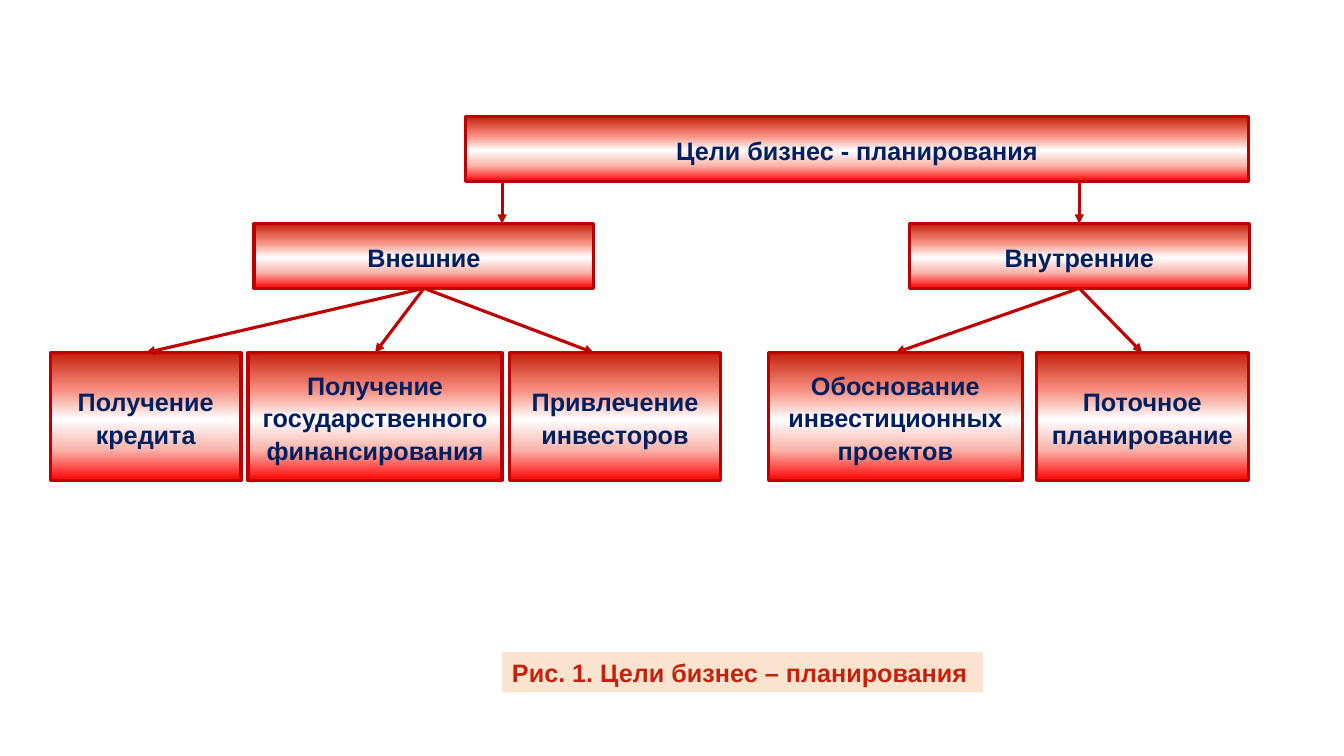
from dataclasses import dataclass

from lxml import etree
from pptx import Presentation
from pptx.dml.color import RGBColor
from pptx.enum.shapes import MSO_CONNECTOR, MSO_SHAPE
from pptx.enum.text import MSO_ANCHOR, PP_ALIGN
from pptx.oxml.ns import qn
from pptx.util import Inches, Pt

RECT = MSO_SHAPE.RECTANGLE
STRAIGHT = MSO_CONNECTOR.STRAIGHT
MIDDLE, TOP = MSO_ANCHOR.MIDDLE, MSO_ANCHOR.TOP
CENTER, LEFT = PP_ALIGN.CENTER, PP_ALIGN.LEFT

NAVY = RGBColor(0x00, 0x20, 0x60)
DARK_RED = RGBColor(0xC0, 0x00, 0x00)
BRICK = RGBColor(0xC4, 0x22, 0x0D)
PEACH = RGBColor(0xFB, 0xE4, 0xCF)
GRADIENT = (
    (0, BRICK),
    (29, RGBColor(0xF7, 0x8E, 0x80)),
    (52, RGBColor(0xFF, 0xFF, 0xFF)),
    (76, RGBColor(0xF9, 0xB3, 0xAA)),
    (100, RGBColor(0xFF, 0x00, 0x00)),
)
LINE_WIDTH = Pt(2.25)


@dataclass(frozen=True)
class Box:
    text: str
    x: float
    y: float
    w: float
    h: float

    @property
    def center(self) -> float:
        return self.x + self.w / 2

    @property
    def bottom(self) -> float:
        return self.y + self.h


@dataclass(frozen=True)
class Arrow:
    x1: float
    y1: float
    x2: float
    y2: float


def bar(text: str, x: float, y: float, w: float) -> Box:
    return Box(text, x, y, w, 0.64)


def leaf(text: str, x: float, w: float) -> Box:
    return Box(text, x, 3.5, w, 1.27)


def fan(parent: Box, *ends: float) -> list[Arrow]:
    return [Arrow(parent.center, parent.bottom, x, 3.5) for x in ends]


def add_box(s, box: Box, color: RGBColor, anchor, align):
    sp = s.shapes.add_shape(RECT, Inches(box.x), Inches(box.y), Inches(box.w), Inches(box.h))
    sp.shadow.inherit = False
    tf = sp.text_frame
    tf.word_wrap = True
    tf.vertical_anchor = anchor
    p = tf.paragraphs[0]
    p.text = box.text
    p.alignment = align
    p.font.name = "Arial"
    p.font.size = Pt(18)
    p.font.bold = True
    p.font.color.rgb = color
    return sp


def add_goal(s, box: Box) -> None:
    sp = add_box(s, box, NAVY, MIDDLE, CENTER)
    p = sp.text_frame.paragraphs[0]
    p.line_spacing = 1.07
    p.space_after = Pt(8)
    sp.line.color.rgb = DARK_RED
    sp.line.width = LINE_WIDTH
    sp.fill.gradient()
    sp.fill.gradient_angle = 270
    # Five gradient stops instead of the default two
    stops = sp._element.spPr.find(qn("a:gradFill")).find(qn("a:gsLst"))
    for stop in list(stops):
        stops.remove(stop)
    for percent, color in GRADIENT:
        stop = etree.SubElement(stops, qn("a:gs"), pos=str(percent * 1000))
        etree.SubElement(stop, qn("a:srgbClr"), val=str(color))


def add_arrow(s, arrow: Arrow) -> None:
    line = s.shapes.add_connector(
        STRAIGHT, Inches(arrow.x1), Inches(arrow.y1), Inches(arrow.x2), Inches(arrow.y2)
    )
    line.line.color.rgb = DARK_RED
    line.line.width = LINE_WIDTH
    etree.SubElement(line.line._get_or_add_ln(), qn("a:tailEnd"), type="triangle")
    etree.SubElement(line._element.spPr, qn("a:effectLst"))


def add_caption(s, box: Box) -> None:
    sp = add_box(s, box, BRICK, TOP, LEFT)
    sp.fill.solid()
    sp.fill.fore_color.rgb = PEACH
    sp.line.fill.background()


# Goals tree
title = bar("Цели бизнес - планирования", 4.62, 1.16, 7.76)
external = bar("Внешние", 2.52, 2.22, 3.37)
internal = bar("Внутренние", 9.02, 2.22, 3.37)
credit = leaf("Получение кредита", 0.5, 1.89)
state = leaf("Получение государственного финансирования", 2.46, 2.52)
investors = leaf("Привлечение инвесторов", 5.05, 2.1)
projects = leaf("Обоснование инвестиционных проектов", 7.62, 2.52)
planning = leaf("Поточное планирование", 10.28, 2.1)

goals = [title, external, internal, credit, state, investors, projects, planning]
arrows = [
    *(Arrow(x, title.bottom, x, external.y) for x in (4.98, internal.center)),
    *fan(external, credit.center, state.center, 5.89),
    *fan(internal, projects.center, planning.center),
]
caption = Box("Рис. 1. Цели бизнес – планирования", 4.98, 6.47, 4.77, 0.4)

# Slide
prs = Presentation()
prs.slide_width = Inches(13.33)
prs.slide_height = Inches(7.5)
s = prs.slides.add_slide(prs.slide_layouts[6])
for goal in goals:
    add_goal(s, goal)
for arrow in arrows:
    add_arrow(s, arrow)
add_caption(s, caption)
prs.save("out.pptx")
